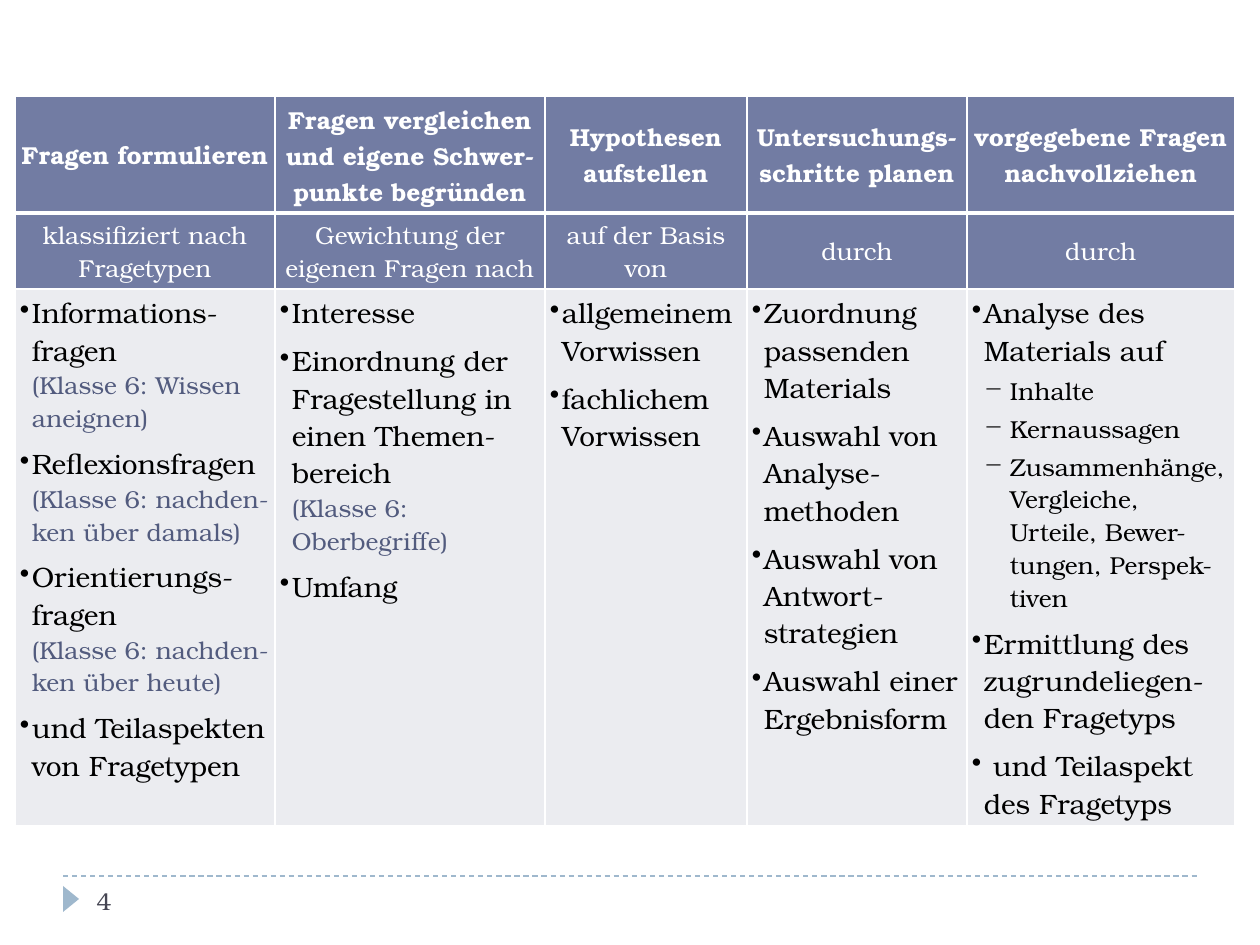
from dataclasses import dataclass

from lxml.etree import SubElement
from pptx import Presentation
from pptx.dml.color import RGBColor
from pptx.enum.dml import MSO_LINE
from pptx.enum.shapes import MSO_CONNECTOR, MSO_SHAPE
from pptx.enum.text import MSO_ANCHOR, PP_ALIGN
from pptx.oxml.ns import qn
from pptx.util import Pt

PX = 914400 / 126
FONT = "TeX Gyre Bonum"
WHITE = RGBColor(0xFF, 0xFF, 0xFF)
BLACK = RGBColor(0, 0, 0)
INDIGO = RGBColor(0x72, 0x7C, 0xA3)
PALE = RGBColor(0xEB, 0xEC, 0xF0)
NOTE_BLUE = RGBColor(0x52, 0x5B, 0x7E)
SKY = RGBColor(0x9F, 0xB8, 0xCD)
SLATE = RGBColor(0x46, 0x46, 0x53)


@dataclass
class Style:
    """Paragraph look; margin and hang are px, size and before are points."""
    size: int
    color: RGBColor
    margin: int = 0
    hang: int = 0
    before: int = 0
    bullet: str = ""
    level: int = 0
    bold: bool = False
    align: PP_ALIGN = PP_ALIGN.LEFT


HEAD = Style(14, WHITE, bold=True, align=PP_ALIGN.CENTER)
SUBHEAD = Style(14, WHITE, align=PP_ALIGN.CENTER)
FIRST = Style(16, BLACK, 12, 12, 0, "•")
POINT = Style(16, BLACK, 12, 12, 6, "•")
NOTE = Style(14, NOTE_BLUE, 12)
DASH = Style(14, BLACK, 38, 26, 3, "−", 1)
NUMBER = Style(14, SLATE)

COL_WIDTHS = [260, 270, 202, 220, 268]
ROW_HEIGHTS = [117, 76, 537]
HEADS = [
    "Fragen formulieren",
    "Fragen vergleichen und eigene Schwer-punkte begründen",
    "Hypothesen aufstellen",
    "Untersuchungs-schritte planen",
    "vorgegebene Fragen nachvollziehen",
]
SUBHEADS = [
    "klassifiziert nach Fragetypen",
    "Gewichtung der eigenen Fragen nach",
    "auf der Basis von",
    "durch",
    "durch",
]
DETAILS = [
    [
        (FIRST, "Informations-fragen"),
        (NOTE, "(Klasse 6: Wissen aneignen)"),
        (POINT, "Reflexionsfragen"),
        (NOTE, "(Klasse 6: nachden-ken über damals)"),
        (POINT, "Orientierungs-fragen"),
        (NOTE, "(Klasse 6: nachden-ken über heute)"),
        (POINT, "und Teilaspekten von Fragetypen"),
    ],
    [
        (FIRST, "Interesse"),
        (POINT, "Einordnung der Fragestellung in einen Themen-bereich"),
        (NOTE, "(Klasse 6: Oberbegriffe)"),
        (POINT, "Umfang"),
    ],
    [
        (FIRST, "allgemeinem Vorwissen"),
        (POINT, "fachlichem Vorwissen"),
    ],
    [
        (FIRST, "Zuordnung passenden Materials"),
        (POINT, "Auswahl von Analyse-methoden"),
        (POINT, "Auswahl von Antwort-strategien"),
        (POINT, "Auswahl einer Ergebnisform"),
    ],
    [
        (FIRST, "Analyse des Materials auf"),
        (DASH, "Inhalte"),
        (DASH, "Kernaussagen"),
        (DASH, "Zusammenhänge, Vergleiche, Urteile, Bewer-tungen, Perspek-tiven"),
        (POINT, "Ermittlung des zugrundeliegen-den Fragetyps"),
        (POINT, " und Teilaspekt des Fragetyps"),
    ],
]


def px(n):
    """Turn px into EMU."""
    return round(n * PX)


def write(tf, paragraphs):
    """Fill a text frame with (style, text) paragraphs."""
    for i, (style, text) in enumerate(paragraphs):
        p = tf.paragraphs[0] if i == 0 else tf.add_paragraph()
        p.alignment, p.level = style.align, style.level
        p.space_before = Pt(style.before)
        pPr = p._p.get_or_add_pPr()
        pPr.set("marL", str(px(style.margin)))
        pPr.set("indent", str(px(-style.hang)))
        if style.bullet:
            SubElement(pPr, qn("a:buChar"), char=style.bullet)
        r = p.add_run()
        r.text = text
        r.font.name, r.font.size = FONT, Pt(style.size)
        r.font.bold, r.font.color.rgb = style.bold, style.color


def add_borders(cell, bottom):
    """Draw white cell borders, with the bottom width in points."""
    tcPr = cell._tc.get_or_add_tcPr()
    for side, width in (("L", 1), ("R", 1), ("T", 1), ("B", bottom)):
        ln = SubElement(tcPr, qn(f"a:ln{side}"), w=str(Pt(width)))
        fill = SubElement(ln, qn("a:solidFill"))
        SubElement(fill, qn("a:srgbClr"), val=str(WHITE))


def format_cell(cell, paragraphs, fill, anchor, bottom=1):
    """Set a cell's text, borders, fill and margins."""
    cell.margin_left = cell.margin_right = px(5)
    cell.margin_top = cell.margin_bottom = px(5)
    cell.vertical_anchor = anchor
    add_borders(cell, bottom)
    cell.fill.solid()
    cell.fill.fore_color.rgb = fill
    write(cell.text_frame, paragraphs)


def add_question_table(s):
    """Add the table of question skills."""
    table = s.shapes.add_table(
        len(ROW_HEIGHTS), len(COL_WIDTHS), px(15), px(96),
        px(sum(COL_WIDTHS)), px(sum(ROW_HEIGHTS))).table
    table.first_row = table.horz_banding = False
    for row, height in zip(table.rows, ROW_HEIGHTS):
        row.height = px(height)
    for c, width in enumerate(COL_WIDTHS):
        table.columns[c].width = px(width)
        format_cell(table.cell(0, c), [(HEAD, HEADS[c])], INDIGO, MSO_ANCHOR.MIDDLE, 3)
        format_cell(table.cell(1, c), [(SUBHEAD, SUBHEADS[c])], INDIGO, MSO_ANCHOR.MIDDLE)
        format_cell(table.cell(2, c), DETAILS[c], PALE, MSO_ANCHOR.TOP)


def add_footer_line(s):
    """Add the dashed line above the slide number."""
    line = s.shapes.add_connector(
        MSO_CONNECTOR.STRAIGHT, px(63), px(876), px(1197), px(876))
    line.line.color.rgb = SKY
    line.line.width = Pt(0.75)
    line.line.dash_style = MSO_LINE.DASH
    SubElement(line._element.spPr, qn("a:effectLst"))


def add_marker(s):
    """Add the triangle that points at the slide number."""
    sp = s.shapes.add_shape(
        MSO_SHAPE.ISOSCELES_TRIANGLE, px(58), px(891), px(26), px(16))
    sp.rotation = 90
    sp.shadow.inherit = False
    sp.fill.solid()
    sp.fill.fore_color.rgb = SKY
    sp.line.fill.background()


def add_number(s, text):
    """Add the slide number."""
    tf = s.shapes.add_textbox(px(84), px(876), px(273), px(50)).text_frame
    tf.word_wrap = True
    tf.vertical_anchor = MSO_ANCHOR.MIDDLE
    write(tf, [(NUMBER, text)])


def main():
    """Build the slide and save it."""
    prs = Presentation()
    prs.slide_width, prs.slide_height = px(1260), px(945)
    s = prs.slides.add_slide(prs.slide_layouts[6])
    add_footer_line(s)
    add_marker(s)
    add_number(s, "4")
    add_question_table(s)
    prs.save("out.pptx")


if __name__ == "__main__":
    main()
